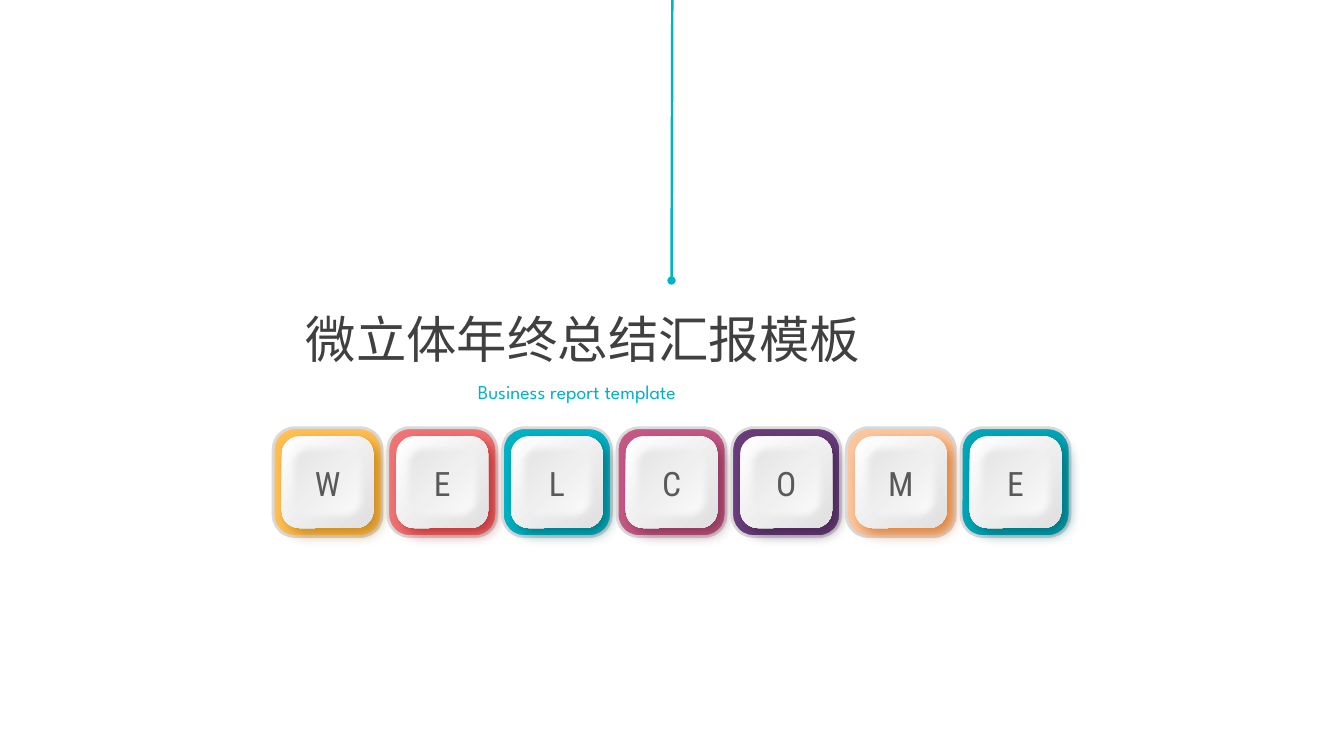
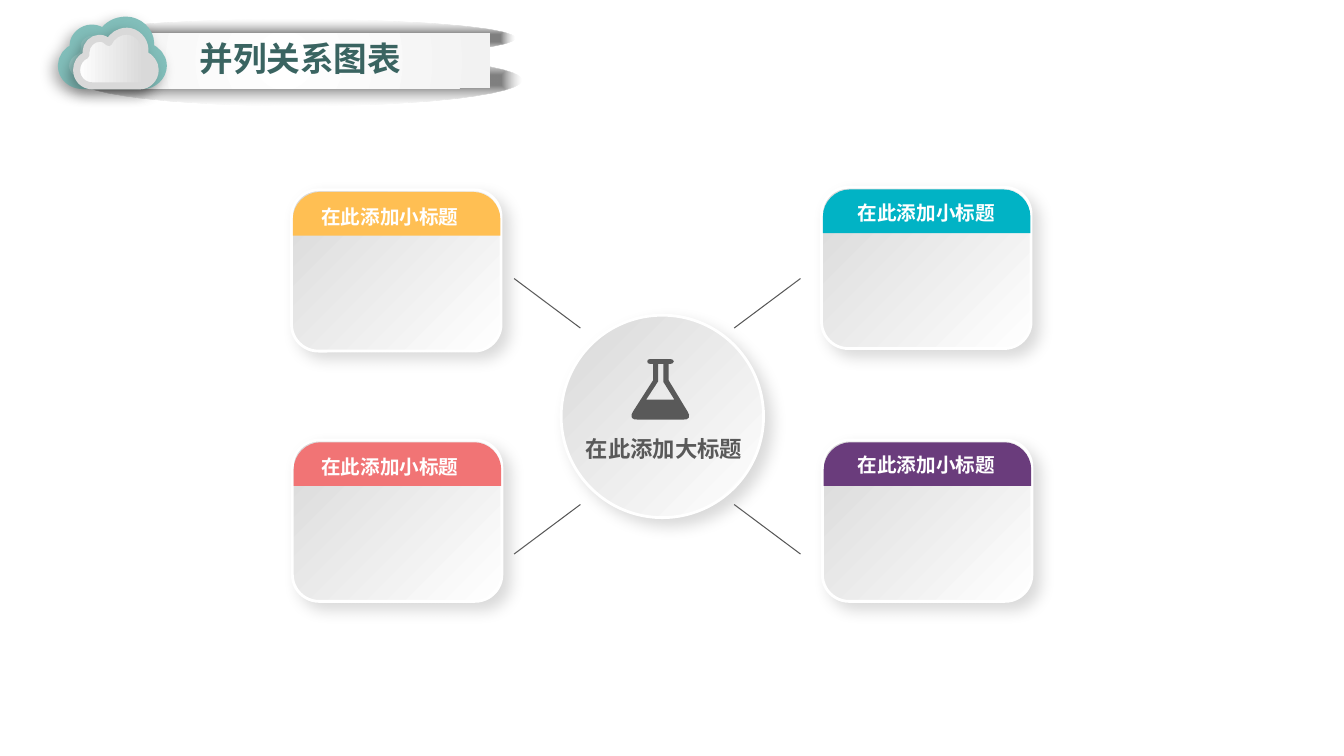
"""Builds a cover with a row of keys and a slide with four parallel cards."""
from lxml.etree import SubElement
from pptx import Presentation
from pptx.dml.color import RGBColor
from pptx.enum.shapes import MSO_CONNECTOR, MSO_SHAPE
from pptx.enum.text import MSO_ANCHOR, PP_ALIGN
from pptx.oxml.ns import qn
from pptx.util import Pt

WHITE = RGBColor(0xFF, 0xFF, 0xFF)
MIST = RGBColor(0xF2, 0xF2, 0xF2)
PALE = RGBColor(0xE2, 0xE2, 0xE2)
FOG = RGBColor(0xE0, 0xE0, 0xE0)
SILVER = RGBColor(0xD9, 0xD9, 0xD9)
ASH = RGBColor(0xC9, 0xC9, 0xC9)
GRAY = RGBColor(0x80, 0x80, 0x80)
SLATE = RGBColor(0x59, 0x59, 0x59)
INK = RGBColor(0x40, 0x40, 0x40)
BLACK = RGBColor(0x00, 0x00, 0x00)
AMBER = RGBColor(0xFF, 0xBF, 0x53)
CORAL = RGBColor(0xF1, 0x74, 0x75)
CYAN = RGBColor(0x01, 0xB3, 0xC5)
TEAL = RGBColor(0x01, 0xA6, 0xB7)
ROSE = RGBColor(0xC6, 0x58, 0x85)
PLUM = RGBColor(0x6A, 0x3C, 0x7C)
PEACH = RGBColor(0xFC, 0xC7, 0x9F)
AMBER_DARK = RGBColor(0xA9, 0x6A, 0x00)
CORAL_DARK = RGBColor(0xA2, 0x10, 0x11)
CYAN_DARK = RGBColor(0x00, 0x59, 0x62)
ROSE_DARK = RGBColor(0x6B, 0x24, 0x41)
PLUM_DARK = RGBColor(0x35, 0x1E, 0x3E)
PEACH_DARK = RGBColor(0xC7, 0x59, 0x06)
SKY = RGBColor(0x9C, 0xCC, 0xC9)
SEA = RGBColor(0x68, 0xB0, 0xAB)
FOAM = RGBColor(0x82, 0xBE, 0xBA)
PINE = RGBColor(0x3A, 0x64, 0x61)

CJK = "Noto Sans CJK SC"
FRAME = {"word_wrap": True, "vertical_anchor": MSO_ANCHOR.MIDDLE, "margin_left": 0,
         "margin_right": 0, "margin_top": 0, "margin_bottom": 0}
COVER_TITLE = {"name": CJK, "size": Pt(36), "bold": False}
COVER_SUB = {"name": "League Spartan", "size": Pt(14), "bold": False}
KEY_LETTER = {"name": "Roboto Condensed", "size": Pt(24), "bold": False}
TITLE = {"name": CJK, "size": Pt(24), "bold": True}
HUB_LABEL = {"name": CJK, "size": Pt(16), "bold": True}
CARD_LABEL = {"name": CJK, "size": Pt(14), "bold": True}

prs = Presentation()
prs.slide_width, prs.slide_height = 12192000, 6858000
CELL = prs.slide_width // 160


def paint(sp, fill, angle=0, focus=None, line=None, shadow=None, soft=0):
    if isinstance(fill, RGBColor):
        sp.fill.solid()
        sp.fill.fore_color.rgb = fill
    else:
        sp.fill.gradient()
        sp.fill.gradient_angle = angle
        for stop, (position, color) in zip(sp.fill.gradient_stops, fill):
            stop.position, stop.color.rgb = position, color
    if focus:
        grad = sp._element.spPr.find(qn("a:gradFill"))
        grad.remove(grad.find(qn("a:lin")))
        centre = SubElement(grad, qn("a:path"), path=focus)
        SubElement(centre, qn("a:fillToRect"), dict.fromkeys("ltrb", "50000"))
        if focus == "shape":
            rim = grad.findall(".//" + qn("a:srgbClr"))[-1]
            SubElement(rim, qn("a:alpha"), val="0")
    if line:
        sp.line.color.rgb, sp.line.width = line[0], Pt(line[1])
    else:
        sp.line.fill.background()
    sp.shadow.inherit = False
    effects = sp._element.spPr.find(qn("a:effectLst"))
    if shadow:
        color, alpha, blur, dist, turn = shadow
        outer = SubElement(effects, qn("a:outerShdw"), blurRad=str(Pt(blur)), dist=str(Pt(dist)),
                           dir=str(turn * 60000), algn="ctr", rotWithShape="0")
        tint = SubElement(outer, qn("a:srgbClr"), val=str(color))
        SubElement(tint, qn("a:alpha"), val=str(alpha * 1000))
    if soft:
        SubElement(effects, qn("a:softEdge"), rad=str(Pt(soft)))


def write(s, box, text, fmt, color, align=PP_ALIGN.CENTER):
    tf = s.shapes.add_textbox(*[int(v * CELL) for v in box]).text_frame
    for name, value in FRAME.items():
        setattr(tf, name, value)
    p = tf.paragraphs[0]
    p.alignment = align
    r = p.add_run()
    r.text = text
    for name, value in fmt.items():
        setattr(r.font, name, value)
    r.font.color.rgb = color
    SubElement(r._r.get_or_add_rPr(), qn("a:ea"), typeface=fmt["name"])


cover, parallel = [prs.slides.add_slide(prs.slide_layouts[6]) for _ in range(2)]

keys = [("W", AMBER, AMBER_DARK), ("E", CORAL, CORAL_DARK), ("L", CYAN, CYAN_DARK),
        ("C", ROSE, ROSE_DARK), ("O", PLUM, PLUM_DARK), ("M", PEACH, PEACH_DARK),
        ("E", TEAL, CYAN_DARK)]
KEY_X, KEY_Y, KEY_STEP = 39, 57.4, 13.65
for i, (letter, color, dark) in enumerate(keys):
    x = KEY_X + i * KEY_STEP
    layers = [(12.96, 0.2, {"fill": color, "line": (SILVER, 2)}),
              (10.92, 0.19, {"fill": [(0, WHITE), (1, FOG)], "angle": 315,
                             "shadow": (dark, 64, 10, 6, 45)}),
              (9.48, 0.2, {"fill": [(0, PALE), (1, WHITE)], "angle": 315, "soft": 5})]
    for size, corner, look in layers:
        box = (x - size / 2, KEY_Y - size / 2, size, size)
        sp = cover.shapes.add_shape(MSO_SHAPE.ROUNDED_RECTANGLE, *[int(v * CELL) for v in box])
        sp.adjustments[0] = corner
        paint(sp, **look)
    write(cover, (x - 3.35, KEY_Y - 2.9, 6.7, 6), letter, KEY_LETTER, SLATE)

write(cover, (56.9, 45.2, 47.3, 2.9), "Business report template", COVER_SUB, CYAN,
      PP_ALIGN.JUSTIFY)
write(cover, (36.4, 36.6, 87.2, 7.3), "微立体年终总结汇报模板", COVER_TITLE, INK,
      PP_ALIGN.JUSTIFY)

cards = [(34.7, 22.6, AMBER, 30.28, 24.36), (97.8, 22.3, CYAN, 94.15, 23.85),
         (34.8, 52.4, CORAL, 30.28, 54.1), (97.9, 52.4, PLUM, 94.15, 53.85)]
panel = {"fill": [(0, WHITE), (1, SILVER)], "angle": 135, "line": (WHITE, 2),
         "shadow": (BLACK, 14, 11, 7, 45)}
glow = {"fill": [(0.2, GRAY), (1, ASH)], "focus": "shape"}
ribbon = {"fill": [(0, WHITE), (1, MIST)], "focus": "circle"}
presets = [(MSO_SHAPE.ROUNDED_RECTANGLE, (x, y, 24.95, 19.2), panel) for x, y, *_ in cards]
presets += [(MSO_SHAPE.OVAL, (66.8, 37.52, 24.1, 24.1), panel),
            (MSO_SHAPE.OVAL, (9.4, 6.5, 52.7, 6.1), glow),
            (MSO_SHAPE.OVAL, (8.4, 2.4, 52.8, 4.3), glow),
            (MSO_SHAPE.RECTANGLE, (9.36, 3.94, 48.96, 6.55), ribbon)]
for kind, box, look in presets:
    paint(parallel.shapes.add_shape(kind, *[int(v * CELL) for v in box]), **look)

TAB = [[(0.13, 0), (0.87, 0), (0.94, 0, 1, 0.28, 1, 0.62), (1, 1), (0, 1), (0, 0.62),
        (0, 0.28, 0.06, 0, 0.13, 0)]]
CLOUD = [[(0.87, 0.43), (0.87, 0.41, 0.87, 0.38, 0.87, 0.34), (0.87, 0.16, 0.76, 0, 0.64, 0),
          (0.54, 0, 0.45, 0.08, 0.41, 0.21), (0.38, 0.16, 0.34, 0.13, 0.29, 0.13),
          (0.2, 0.13, 0.12, 0.25, 0.12, 0.38), (0.12, 0.4, 0.12, 0.43, 0.12, 0.44),
          (0.05, 0.48, 0, 0.59, 0, 0.71), (0, 0.88, 0.09, 1, 0.2, 1), (0.81, 1),
          (0.91, 1, 1, 0.87, 1, 0.71), (1, 0.58, 0.94, 0.48, 0.87, 0.43)]]
FLASK = [[(0.33, 0), (0.68, 0), (0.7, 0, 0.71, 0, 0.72, 0.01), (0.73, 0.02, 0.74, 0.03, 0.74, 0.04),
          (0.74, 0.05, 0.73, 0.06, 0.72, 0.07), (0.71, 0.08, 0.7, 0.08, 0.68, 0.08),
          (0.65, 0.08), (0.65, 0.35), (0.98, 0.87), (1.01, 0.9, 1.01, 0.94, 1, 0.97),
          (0.98, 1, 0.95, 1, 0.91, 1), (0.11, 1), (0.07, 1, 0.03, 1, 0.01, 0.97),
          (0, 0.94, 0, 0.9, 0.03, 0.87), (0.38, 0.35), (0.38, 0.08), (0.33, 0.08),
          (0.31, 0.08, 0.3, 0.08, 0.29, 0.07), (0.28, 0.06, 0.28, 0.05, 0.28, 0.04),
          (0.28, 0.03, 0.28, 0.02, 0.29, 0.01), (0.3, 0, 0.31, 0, 0.33, 0)],
         [(0.47, 0.08), (0.47, 0.35), (0.47, 0.37), (0.46, 0.38), (0.26, 0.67), (0.75, 0.67),
          (0.56, 0.38), (0.56, 0.37), (0.56, 0.35), (0.56, 0.08), (0.47, 0.08)]]
CLOUD_SHADOW = (BLACK, 30, 10, 5, 135)
outlines = [(TAB, (x + 0.17, y + 0.25, 24.7, 5.2), {"fill": color}) for x, y, color, *_ in cards]
outlines += [(FLASK, (75.15, 42.75, 6.85, 7.2), {"fill": SLATE}),
             (CLOUD, (7.56, 2.64, 11.64, 7.3),
              {"fill": [(0, SKY), (0.87, SEA)], "line": (FOAM, 8), "shadow": CLOUD_SHADOW}),
             (CLOUD, (9.12, 3.72, 9.36, 6.5),
              {"fill": [(0, WHITE), (0.87, SILVER)], "line": (SILVER, 5), "shadow": CLOUD_SHADOW})]
for contours, (left, top, width, height), look in outlines:
    builder, steps = None, []
    for contour in contours:
        spots = [[(int((left + x * width) * CELL), int((top + y * height) * CELL))
                  for x, y in zip(step[::2], step[1::2])] for step in contour]
        if builder is None:
            builder = parallel.shapes.build_freeform(*spots[0][0])
        else:
            builder.move_to(*spots[0][0])
        builder.add_line_segments([spot[-1] for spot in spots[1:]], close=True)
        steps += spots[1:]
    sp = builder.convert_to_shape()
    for segment, spot in zip(list(sp._element.iter(qn("a:lnTo"))), steps):
        if len(spot) == 3:
            segment.tag = qn("a:cubicBezTo")
            segment.remove(segment[0])
            for x, y in spot:
                SubElement(segment, qn("a:pt"), x=str(x - sp.left), y=str(y - sp.top))
    paint(sp, **look)

for *_, label_left, label_top in cards:
    write(parallel, (label_left, label_top, 32.3, 2.9), "在此添加小标题", CARD_LABEL, WHITE)
write(parallel, (69.5, 51.75, 19.1, 3.2), "在此添加大标题", HUB_LABEL, SLATE)
write(parallel, (23.76, 4.5, 32.3, 4.8), "并列关系图表", TITLE, PINE, PP_ALIGN.LEFT)

HUB_X, HUB_Y = 78.25, 49.56
lines = [(cover, (80.04, 0, 79.95, 33.4), CYAN, 1.75)]
lines += [(parallel, (HUB_X + 9.15 * h, HUB_Y + 10.5 * v, HUB_X + 17.05 * h, HUB_Y + 16.4 * v),
           SLATE, 0.75) for h in (-1, 1) for v in (-1, 1)]
for s, ends, color, width in lines:
    link = s.shapes.add_connector(MSO_CONNECTOR.STRAIGHT, *[int(v * CELL) for v in ends])
    link.line.color.rgb, link.line.width = color, Pt(width)
    if s is cover:
        SubElement(link._element.spPr.find(qn("a:ln")), qn("a:tailEnd"), type="oval")
    SubElement(link._element.spPr, qn("a:effectLst"))

prs.save("out.pptx")
